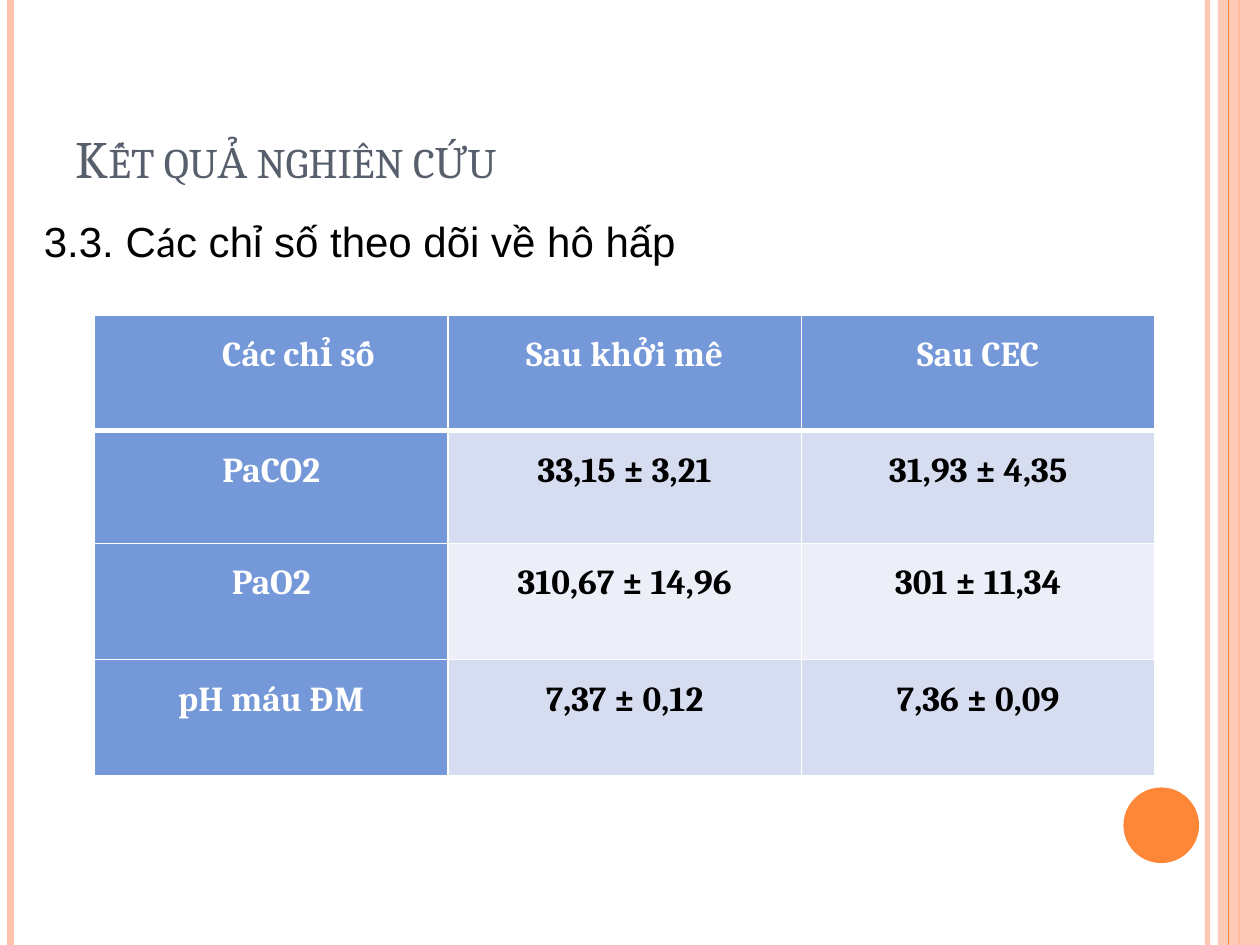
from dataclasses import dataclass

from lxml.etree import SubElement
from pptx import Presentation
from pptx.dml.color import RGBColor
from pptx.enum.shapes import MSO_CONNECTOR as Connector, MSO_SHAPE as Preset
from pptx.enum.text import MSO_ANCHOR as Anchor, PP_ALIGN as Align
from pptx.oxml import parse_xml
from pptx.oxml.ns import nsdecls, qn
from pptx.util import Pt

COLORS = {
    "peach": "FEC3AE", "orange": "FE8637", "title": "575F6D",
    "blue": "7598D9", "band": "D6DDF1", "pale": "ECEFF8",
    "white": "FFFFFF", "black": "000000",
}
SLIDE_WIDTH, SLIDE_HEIGHT = 720, 540


@dataclass
class Stripe:
    x: float
    width: float
    color: str
    opacity: int = 100


@dataclass
class Span:
    text: str
    font: str
    size: float
    color: str
    bold: bool = False


STRIPES_BEHIND = [
    Stripe(690, 3, "peach", 93),
    Stripe(6, 4.5, "peach"),
    Stripe(708, 1.5, "orange"),
]
STRIPE_FRONT = Stripe(702, 0.75, "orange")

COLUMN_WIDTH = 202
ROW_HEIGHTS = [66, 64.5, 66.5, 66.5]
ROWS = [
    ["Các chỉ số", "Sau khởi mê", "Sau CEC"],
    ["PaCO2", "33,15 ± 3,21", "31,93 ± 4,35"],
    ["PaO2", "310,67 ± 14,96", "301 ± 11,34"],
    ["pH máu ĐM", "7,37 ± 0,12", "7,36 ± 0,09"],
]
CELL_MARGIN = 5
HEADING_INDENT = 31


def rgb(name: str) -> RGBColor:
    return RGBColor.from_string(COLORS[name])


def set_opacity(properties, percent: int) -> None:
    color = properties.find(".//" + qn("a:srgbClr"))
    SubElement(color, qn("a:alpha"), val=str(percent * 1000))


def draw_stripe(page, stripe: Stripe) -> None:
    line = page.shapes.add_connector(
        Connector.STRAIGHT, Pt(stripe.x), Pt(0), Pt(stripe.x), Pt(SLIDE_HEIGHT))
    line.line.color.rgb = rgb(stripe.color)
    line.line.width = Pt(stripe.width)
    properties = line._element.spPr
    if stripe.opacity < 100:
        set_opacity(properties, stripe.opacity)
    SubElement(properties, qn("a:effectLst"))


def draw_shape(page, preset, left: float, top: float, width: float,
               height: float, color: str):
    shape = page.shapes.add_shape(preset, Pt(left), Pt(top), Pt(width), Pt(height))
    shape.shadow.inherit = False
    shape.fill.solid()
    shape.fill.fore_color.rgb = rgb(color)
    shape.line.fill.background()
    return shape


def add_span(para, span: Span):
    run = para.add_run()
    run.text = span.text
    run.font.name = span.font
    run.font.size = Pt(span.size)
    run.font.bold = span.bold
    run.font.color.rgb = rgb(span.color)
    return run


def draw_text(page, left: float, top: float, width: float, height: float,
              anchor, spans: list[Span]) -> list:
    box = page.shapes.add_textbox(Pt(left), Pt(top), Pt(width), Pt(height))
    frame = box.text_frame
    frame.word_wrap = True
    frame.vertical_anchor = anchor
    return [add_span(frame.paragraphs[0], span) for span in spans]


def set_borders(cell, widths: dict[str, float]) -> None:
    properties = cell._tc.get_or_add_tcPr()
    for position, (side, width) in enumerate(widths.items()):
        properties.insert(position, parse_xml(
            f'<a:ln{side} {nsdecls("a")} w="{Pt(width)}"><a:solidFill>'
            f'<a:srgbClr val="{COLORS["white"]}"/></a:solidFill></a:ln{side}>'))


def fill_cell(cell, text: str, row: int, column: int) -> None:
    is_heading = row == 0 or column == 0
    cell.margin_left = cell.margin_right = Pt(CELL_MARGIN)
    cell.margin_top = cell.margin_bottom = Pt(0)
    if row == column == 0:
        cell.margin_left = Pt(CELL_MARGIN + HEADING_INDENT)
    cell.fill.solid()
    cell.fill.fore_color.rgb = rgb(
        "blue" if is_heading else "band" if row % 2 else "pale")
    set_borders(cell, {"L": 1, "R": 1, "T": 3 if row == 1 else 1,
                       "B": 3 if row == 0 else 1})
    para = cell.text_frame.paragraphs[0]
    para.alignment = Align.CENTER
    para.line_spacing = 1.5
    add_span(para, Span(text, "Cambria", 20, "white" if is_heading else "black", True))


def draw_table(page, left: float, top: float) -> None:
    columns = len(ROWS[0])
    table = page.shapes.add_table(
        len(ROWS), columns, Pt(left), Pt(top),
        Pt(COLUMN_WIDTH * columns), Pt(sum(ROW_HEIGHTS))).table
    for column in table.columns:
        column.width = Pt(COLUMN_WIDTH)
    for row, texts in enumerate(ROWS):
        table.rows[row].height = Pt(ROW_HEIGHTS[row])
        for column, text in enumerate(texts):
            fill_cell(table.cell(row, column), text, row, column)


def main() -> None:
    deck = Presentation()
    deck.slide_width, deck.slide_height = Pt(SLIDE_WIDTH), Pt(SLIDE_HEIGHT)
    page = deck.slides.add_slide(deck.slide_layouts[6])

    # Edge decoration
    for stripe in STRIPES_BEHIND:
        draw_stripe(page, stripe)
    band = draw_shape(page, Preset.RECTANGLE, 696, 0, 24, SLIDE_HEIGHT, "peach")
    set_opacity(band._element.spPr, 87)
    draw_stripe(page, STRIPE_FRONT)
    draw_shape(page, Preset.OVAL, 642, 450, 43.2, 43.2, "orange")

    # Title in small capitals
    for run in draw_text(page, 36, 21.6, 588, 90, Anchor.BOTTOM,
                         [Span("Kết quả nghiên cứu", "Cambria", 30, "title")]):
        run.font._element.set("cap", "small")

    # Results table
    draw_table(page, 54, 180)

    # Section heading
    draw_text(page, 18, 119.5, 572, 36, Anchor.MIDDLE, [
        Span("3.3. C", "Arial", 24, "black"),
        Span("á", "Calibri", 24, "black"),
        Span("c chỉ số theo dõi về hô hấp", "Arial", 24, "black"),
    ])

    deck.save("out.pptx")


if __name__ == "__main__":
    main()
